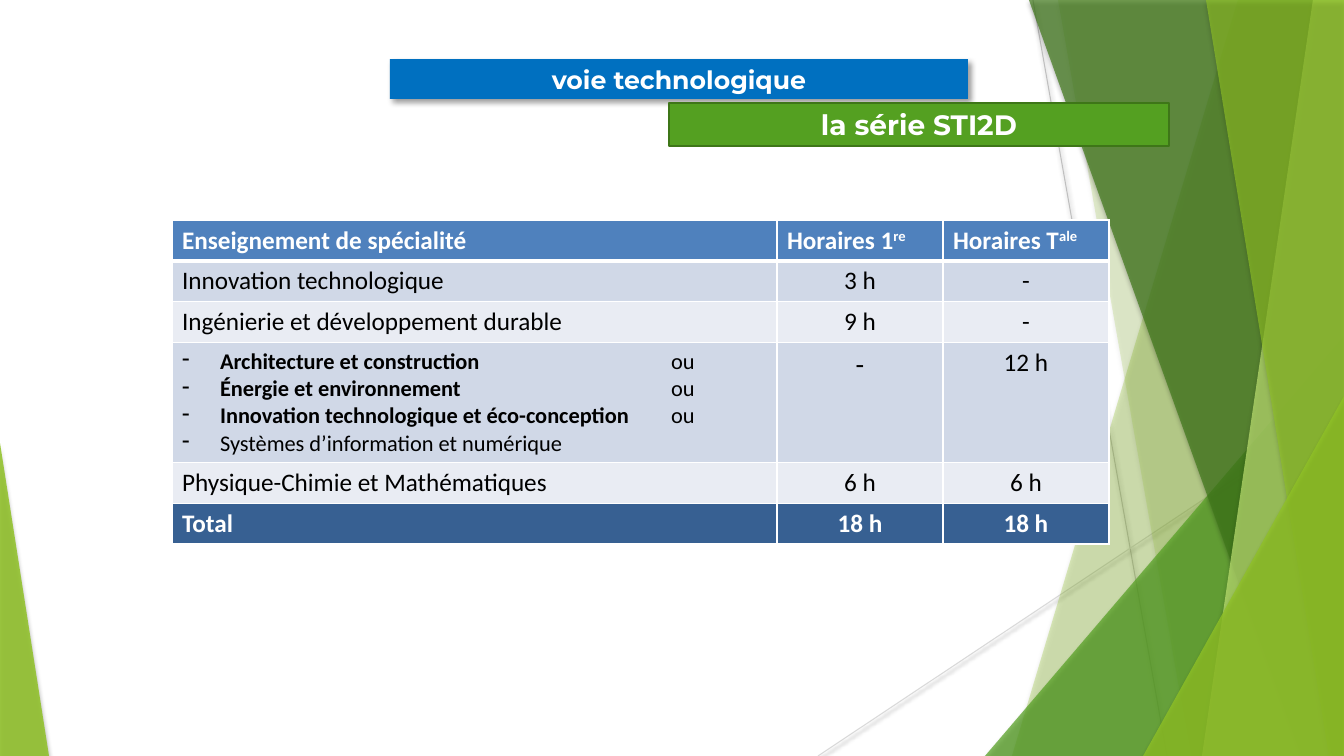
from lxml.etree import SubElement
from pptx import Presentation
from pptx.dml.color import RGBColor
from pptx.enum.shapes import MSO_CONNECTOR, MSO_SHAPE
from pptx.enum.text import MSO_ANCHOR, MSO_AUTO_SIZE, PP_ALIGN
from pptx.oxml.ns import qn
from pptx.util import Pt

PX = 914400 / 100.8
W, H = 1344, 756

WHITE = RGBColor(0xFF, 0xFF, 0xFF)
BLACK = RGBColor(0, 0, 0)
GREY = RGBColor(0xBF, 0xBF, 0xBF)
PALE_GREY = RGBColor(0xD9, 0xD9, 0xD9)
LIME = RGBColor(0x90, 0xC2, 0x26)
PALE_LIME = RGBColor(0xC0, 0xE4, 0x74)
GREEN = RGBColor(0x54, 0xA0, 0x21)
DARK_GREEN = RGBColor(0x3F, 0x78, 0x19)
EDGE_GREEN = RGBColor(0x3E, 0x76, 0x18)
BLUE = RGBColor(0x00, 0x70, 0xC0)
HEAD_BLUE = RGBColor(0x4F, 0x81, 0xBD)
TOTAL_BLUE = RGBColor(0x37, 0x60, 0x92)
BAND_DARK = RGBColor(0xD0, 0xD8, 0xE7)
BAND_LIGHT = RGBColor(0xE9, 0xEC, 0xF3)

# Shadows: opacity %, blur pt, distance pt, angle
LINE_SHADOW = (38, 3.1, 1.6, 90)
FACET_SHADOW = (35, 3, 2, 90)
TITLE_SHADOW = (40, 4, 3, 45)

LINES = [((1033, 0), (1167, H), GREY), ((W, 406), (818, H), PALE_GREY)]

# Facets, back to front: a band has (top left x, bottom left x) and reaches the
# right edge; a triangle has (left, top, width) and stands on the bottom edge.
FACETS = [
    ("band", (1238, 1012), LIME, 30),
    ("band", (1058, 1191), LIME, 20),
    ("right triangle", (985, 336, 359), GREEN, 72),
    ("band", (1029, 1301), DARK_GREEN, 70),
    ("band", (1313, 1202), PALE_LIME, 70),
    ("band", (1206, 1329), LIME, 65),
    ("right triangle", (1143, 396, 201), LIME, 80),
    ("left triangle", (0, 443, 49), LIME, 85),
]

TITLE = ("voie technologique", (390, 59, 578, 40), 18)
SERIES = ("la série STI2D", (669, 103, 500, 43), 20)

OPTIONS = [
    ("Architecture et construction", "ou"),
    ("Énergie et environnement", "ou"),
    ("Innovation technologique et éco-conception", "ou"),
    ("Systèmes d’information et numérique", ""),
]
# A cell is a list of paragraphs; a paragraph is a (text, second part) pair.
ROWS = [
    [[("Enseignement de spécialité", "")], [("Horaires 1", "re")], [("Horaires T", "ale")]],
    [[("Innovation technologique", "")], [("3 h", "")], [("-", "")]],
    [[("Ingénierie et développement durable", "")], [("9 h", "")], [("-", "")]],
    [OPTIONS, [("-", "")], [("12 h", "")]],
    [[("Physique-Chimie et Mathématiques", "")], [("6 h", "")], [("6 h", "")]],
    [[("Total", "")], [("18 h", "")], [("18 h", "")]],
]
ROW_FILLS = [HEAD_BLUE, BAND_DARK, BAND_LIGHT, BAND_DARK, BAND_LIGHT, TOTAL_BLUE]
TABLE_AT = (172, 220)
COL_WIDTHS = [605, 166, 166]
ROW_HEIGHTS = [40, 40, 40, 117, 40, 40]
OPTION_INDENT, OPTION_TAB = 38, 489
SIZES = {(3, 0): 16, (3, 1): 20}


def emu(*lengths):
    return [round(v * PX) for v in lengths]


def set_shadow(sp, shadow=None):
    """Replace the theme shadow by the given one, or by none."""
    effects = SubElement(sp.element.spPr, qn("a:effectLst"))
    if shadow:
        alpha, blur, dist, angle = shadow
        outer = SubElement(effects, qn("a:outerShdw"), blurRad=str(Pt(blur)), dist=str(Pt(dist)),
                           dir=str(angle * 60000), algn="ctr", rotWithShape="0")
        clr = SubElement(outer, qn("a:srgbClr"), val="000000")
        SubElement(clr, qn("a:alpha"), val=str(alpha * 1000))


def add_run(p, text, **formats):
    r = p.add_run()
    r.text = text
    r.font.color.rgb = formats.pop("color")
    for name, value in formats.items():
        setattr(r.font, name, value)
    return r


def add_line(shapes, start, end, color):
    cxn = shapes.add_connector(MSO_CONNECTOR.STRAIGHT, *emu(*start, *end))
    cxn.line.color.rgb = color
    cxn.line.width = Pt(0.75)
    set_shadow(cxn, LINE_SHADOW)


def add_facet(shapes, kind, geometry, color, alpha):
    if kind == "band":
        top_x, bottom_x = geometry
        outline = shapes.build_freeform(top_x, 0, scale=PX)
        outline.add_line_segments([(W, 0), (W, H), (bottom_x, H)], close=True)
        sp = outline.convert_to_shape()
    else:
        left, top, width = geometry
        sp = shapes.add_shape(MSO_SHAPE.ISOSCELES_TRIANGLE, *emu(left, top, width, H - top))
        sp.adjustments[0] = 1 if kind == "right triangle" else 0
    sp.fill.solid()
    sp.fill.fore_color.rgb = color
    clr = sp.element.spPr.find(qn("a:solidFill"))[0]
    SubElement(clr, qn("a:alpha"), val=str(alpha * 1000))
    sp.line.fill.background()
    set_shadow(sp, FACET_SHADOW)


def format_banner(sp, text, box, size, fill, edge=None, shadow=None):
    sp.left, sp.top, sp.width, sp.height = emu(*box)
    sp.fill.solid()
    sp.fill.fore_color.rgb = fill
    if edge:
        sp.line.color.rgb = edge
        sp.line.width = Pt(2)
    else:
        sp.line.fill.background()
    set_shadow(sp, shadow)
    tf = sp.text_frame
    tf.word_wrap = True
    tf.auto_size = MSO_AUTO_SIZE.NONE
    tf.vertical_anchor = MSO_ANCHOR.MIDDLE
    p = tf.paragraphs[0]
    p.alignment = PP_ALIGN.CENTER
    add_run(p, text, name="Montserrat", size=Pt(size), bold=True, color=WHITE)


def set_borders(cell, row):
    tcPr = cell._tc.get_or_add_tcPr()
    for side in "LRTB":
        thick = (row, side) in ((0, "B"), (1, "T"))
        ln = SubElement(tcPr, qn(f"a:ln{side}"), w=str(Pt(3 if thick else 0.96)))
        SubElement(SubElement(ln, qn("a:solidFill")), qn("a:srgbClr"), val=str(WHITE))


def set_dash_bullet(p):
    indent, tab = emu(OPTION_INDENT, OPTION_TAB)
    pPr = p._p.get_or_add_pPr()
    pPr.set("marL", str(indent))
    pPr.set("indent", str(-indent))
    SubElement(pPr, qn("a:buChar"), char="-")
    SubElement(SubElement(pPr, qn("a:tabLst")), qn("a:tab"), pos=str(tab), algn="l")


def fill_cell(cell, row, col, paragraphs):
    set_borders(cell, row)
    cell.fill.solid()
    cell.fill.fore_color.rgb = ROW_FILLS[row]
    strong = row in (0, len(ROWS) - 1)
    base = {"name": "Calibri", "size": Pt(SIZES.get((row, col), 18)),
            "color": WHITE if strong else BLACK}
    options = paragraphs is OPTIONS
    tf = cell.text_frame
    for i, (text, second) in enumerate(paragraphs):
        p = tf.add_paragraph() if i else tf.paragraphs[0]
        p.alignment = PP_ALIGN.CENTER if row and col else PP_ALIGN.LEFT
        if options:
            set_dash_bullet(p)
        add_run(p, text, bold=strong or bool(second), **base)
        if second:
            r = add_run(p, "\t" + second if options else second, bold=strong, **base)
            if not options:
                r._r.get_or_add_rPr().set("baseline", "30000")


def add_hours_table(shapes):
    size = sum(COL_WIDTHS), sum(ROW_HEIGHTS)
    table = shapes.add_table(len(ROWS), len(COL_WIDTHS), *emu(*TABLE_AT, *size)).table
    for column, width in zip(table.columns, emu(*COL_WIDTHS)):
        column.width = width
    for row, height in zip(table.rows, emu(*ROW_HEIGHTS)):
        row.height = height
    for r, cells in enumerate(ROWS):
        for c, paragraphs in enumerate(cells):
            fill_cell(table.cell(r, c), r, c, paragraphs)


def main():
    prs = Presentation()
    prs.slide_width, prs.slide_height = emu(W, H)
    shapes = prs.slides.add_slide(prs.slide_layouts[5]).shapes
    for line in LINES:
        add_line(shapes, *line)
    for facet in FACETS:
        add_facet(shapes, *facet)
    title = shapes.title
    title.element.getparent().append(title.element)  # bring in front of the facets
    format_banner(title, *TITLE, BLUE, shadow=TITLE_SHADOW)
    series = shapes.add_shape(MSO_SHAPE.RECTANGLE, *emu(*SERIES[1]))
    format_banner(series, *SERIES, GREEN, edge=EDGE_GREEN)
    add_hours_table(shapes)
    prs.save("out.pptx")


if __name__ == "__main__":
    main()
